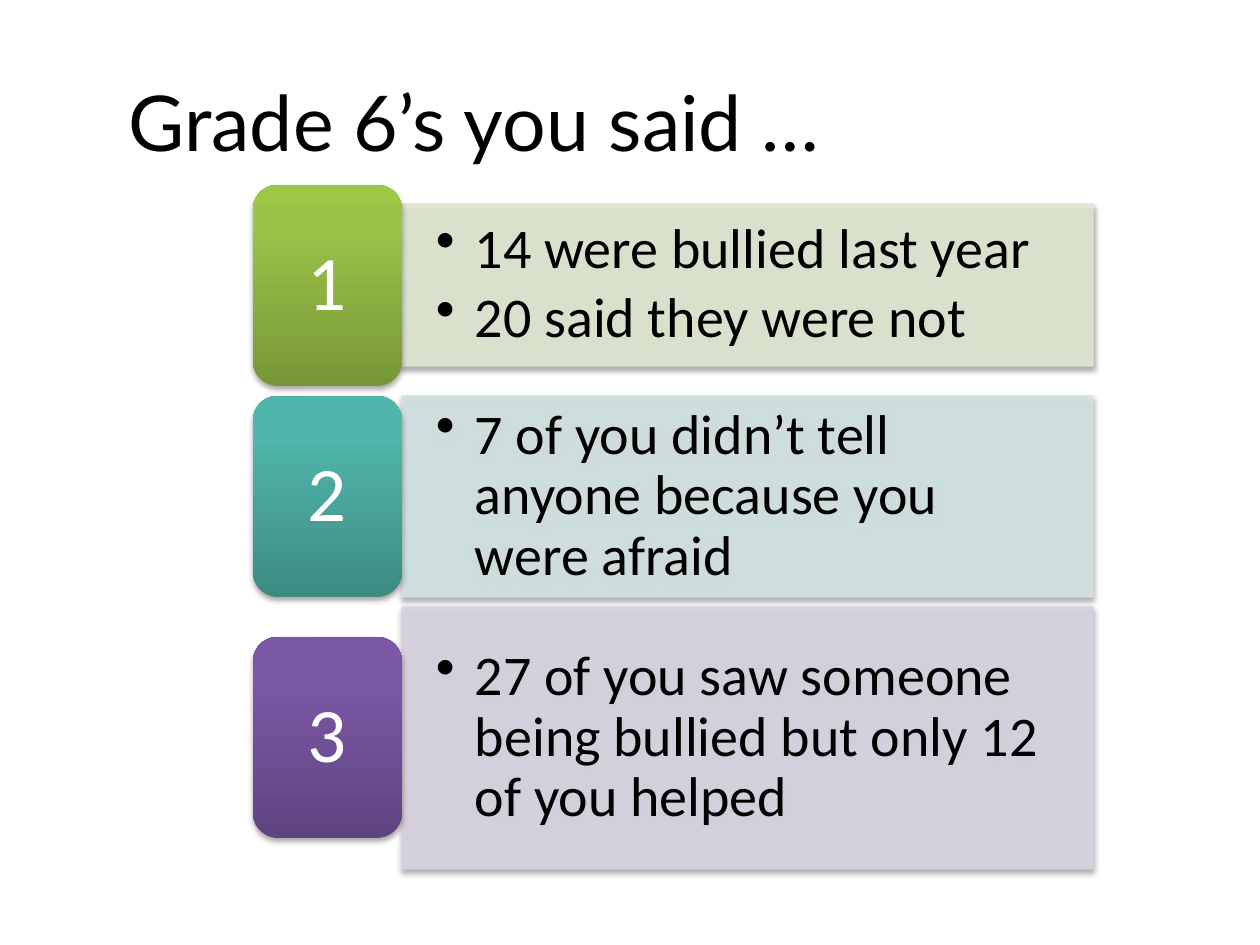
import copy
import dataclasses

import pptx
import pptx.dml.color
import pptx.enum.shapes
import pptx.enum.text
import pptx.oxml
import pptx.oxml.ns
import pptx.util

EMU_PER_INCH = 914400
PX_PER_INCH = 126
SLIDE_WIDTH, SLIDE_HEIGHT = 1260, 945
BADGE_LEFT, BADGE_WIDTH, BADGE_HEIGHT = 253, 149, 201
PANEL_LEFT, PANEL_WIDTH = BADGE_LEFT + BADGE_WIDTH, 691
FIRST_TOP, ROW_GAP = 185, 10
BULLET_INDENT = 39

RECTANGLE = pptx.enum.shapes.MSO_SHAPE.RECTANGLE
ROUNDED = pptx.enum.shapes.MSO_SHAPE.ROUNDED_RECTANGLE
LEFT = pptx.enum.text.PP_ALIGN.LEFT
CENTER = pptx.enum.text.PP_ALIGN.CENTER
NAMESPACE = pptx.oxml.ns.nsdecls("a")
SHADOW = (
    f'<a:outerShdw {NAMESPACE} blurRad="40000" dist="23000" dir="5400000" rotWithShape="0">'
    '<a:srgbClr val="000000"><a:alpha val="35000"/></a:srgbClr></a:outerShdw>'
)


@dataclasses.dataclass(frozen=True)
class Row:
    label: str
    points: tuple[str, ...]
    panel_height: int
    panel_color: str
    badge_colors: tuple[str, str, str]


ROWS = (
    Row("1", ("14 were bullied last year", "20 said they were not"),
        162, "DEE7D1", ("779737", "9BC348", "9DC746")),
    Row("2", ("7 of you didn’t tell anyone because you were afraid",),
        201, "D2E3E2", ("3D8B83", "50B5AA", "4EB8AC")),
    Row("3", ("27 of you saw someone being bullied but only 12 of you helped",),
        262, "D8D3E0", ("5F4480", "7B58A6", "7C57A8")),
)


def px(length: int) -> int:
    return pptx.util.Emu(round(length * EMU_PER_INCH / PX_PER_INCH))


def color(value: str) -> pptx.dml.color.RGBColor:
    return pptx.dml.color.RGBColor.from_string(value)


def apply_format(target, values: dict) -> None:
    for name, value in values.items():
        setattr(target, name, value)


def format_font(font, name: str, size: int, value: str) -> None:
    apply_format(font, {"name": name, "size": pptx.util.Pt(size)})
    font.color.rgb = color(value)


def add_box(slide, kind, left: int, top: int, width: int, height: int):
    shape = slide.shapes.add_shape(kind, px(left), px(top), px(width), px(height))
    shape.shadow.inherit = False
    effects = shape._element.spPr.find(pptx.oxml.ns.qn("a:effectLst"))
    effects.append(pptx.oxml.parse_xml(SHADOW))
    return shape


def write_text(shape, lines: tuple[str, ...], size: int, value: str,
               margin_x: int, margin_y: int, space_after: int, bulleted: bool) -> None:
    frame = shape.text_frame
    apply_format(frame, {
        "word_wrap": True,
        "vertical_anchor": pptx.enum.text.MSO_ANCHOR.MIDDLE,
        "margin_left": px(margin_x), "margin_right": px(margin_x),
        "margin_top": px(margin_y), "margin_bottom": px(margin_y),
    })
    frame.text = "\n".join(lines)
    for paragraph in frame.paragraphs:
        if bulleted:
            properties = paragraph._p.get_or_add_pPr()
            properties.set("marL", str(px(BULLET_INDENT)))
            properties.set("indent", str(-px(BULLET_INDENT)))
            properties.append(pptx.oxml.parse_xml(f'<a:buChar {NAMESPACE} char="•"/>'))
        apply_format(paragraph, {
            "alignment": LEFT if bulleted else CENTER,
            "line_spacing": 0.9,
            "space_after": pptx.util.Pt(space_after),
        })
        format_font(paragraph.font, "Calibri", size, value)


def add_panel(slide, row: Row, top: int) -> None:
    panel = add_box(slide, RECTANGLE, PANEL_LEFT, top, PANEL_WIDTH, row.panel_height)
    panel.fill.solid()
    panel.fill.fore_color.rgb = color(row.panel_color)
    panel.line.color.rgb = color(row.panel_color)
    panel.line.width = pptx.util.Pt(0.75)
    for fill in panel._element.spPr.iter(pptx.oxml.ns.qn("a:solidFill")):
        fill[0].append(pptx.oxml.parse_xml(f'<a:alpha {NAMESPACE} val="90000"/>'))
    write_text(panel, row.points, 32, "000000", 34, 18, 5, True)


def add_badge(slide, row: Row, top: int) -> None:
    badge = add_box(slide, ROUNDED, BADGE_LEFT, top, BADGE_WIDTH, BADGE_HEIGHT)
    badge.line.fill.background()
    badge.fill.gradient()
    badge.fill.gradient_angle = 90
    stops = next(badge._element.spPr.iter(pptx.oxml.ns.qn("a:gsLst")))
    stops.append(copy.deepcopy(stops[-1]))
    for stop, position, value in zip(badge.fill.gradient_stops, (0, 0.8, 1), row.badge_colors):
        stop.position = position
        stop.color.rgb = color(value)
    write_text(badge, (row.label,), 44, "FFFFFF", 23, 11, 15, False)


def add_title(slide, text: str) -> None:
    title = slide.shapes.title
    apply_format(title, {"left": px(116), "top": px(42), "width": px(1112), "height": px(158)})
    title.text_frame.text = text
    title.text_frame.vertical_anchor = pptx.enum.text.MSO_ANCHOR.MIDDLE
    paragraph = title.text_frame.paragraphs[0]
    paragraph.alignment = LEFT
    format_font(paragraph.font, "Lato", 44, "000000")


def main() -> None:
    presentation = pptx.Presentation()
    apply_format(presentation, {"slide_width": px(SLIDE_WIDTH), "slide_height": px(SLIDE_HEIGHT)})
    slide = presentation.slides.add_slide(presentation.slide_layouts[5])
    add_title(slide, "Grade 6’s you said …")
    top = FIRST_TOP
    for row in ROWS:
        row_height = max(row.panel_height, BADGE_HEIGHT)
        add_panel(slide, row, top + (row_height - row.panel_height) // 2)
        add_badge(slide, row, top + (row_height - BADGE_HEIGHT) // 2)
        top += row_height + ROW_GAP
    presentation.save("out.pptx")


if __name__ == "__main__":
    main()
